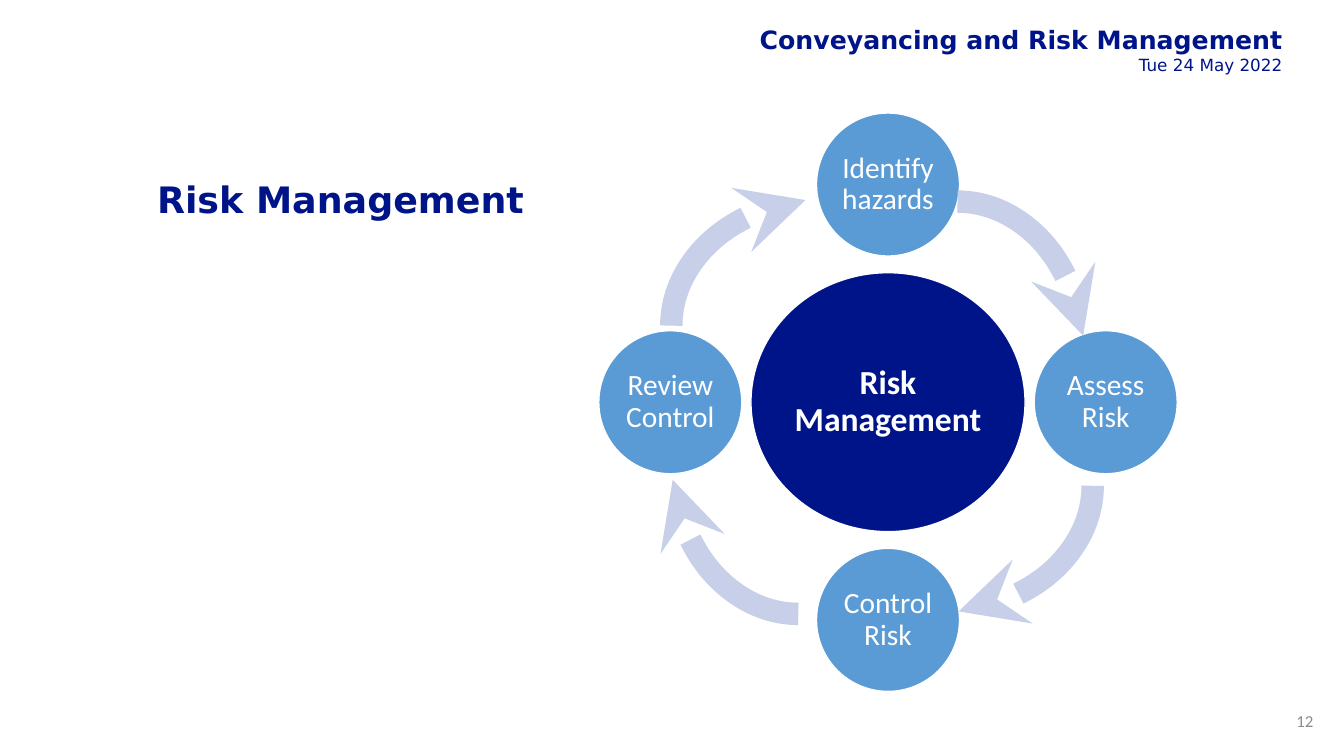
from math import cos, radians, sin

from lxml.etree import SubElement
from pptx import Presentation
from pptx.dml.color import RGBColor
from pptx.enum.shapes import MSO_SHAPE as Preset
from pptx.enum.text import MSO_ANCHOR as Anchor, MSO_AUTO_SIZE as AutoSize, PP_ALIGN as Align
from pptx.oxml.ns import qn
from pptx.util import Pt

HEADER = ("Conveyancing and Risk Management", "Tue 24 May 2022")
TITLE = "Risk Management"
HUB = "Risk Management"
STEPS = ("Identify hazards", "Assess Risk", "Control Risk", "Review Control")  # clockwise from top
PAGE_NUMBER = "12"
# rotation in degrees, centre x, centre y
CYCLE_ARROWS = ((0, 684, 256.3), (90, 668.2, 347), (270, 591.8, 232.6), (180, 570.2, 326.2))

THEME = {
    "navy": RGBColor(0x00, 0x14, 0x89),
    "blue": RGBColor(0x5B, 0x9B, 0xD5),
    "pale": RGBColor(0xC7, 0xCF, 0xE9),
    "grey": RGBColor(0x8C, 0x8C, 0x8C),
    "white": RGBColor(0xFF, 0xFF, 0xFF),
    "heading": "DejaVu Sans",
    "body": "Calibri",
    "title_size": 26, "header_size": 18, "date_size": 12,
    "hub_size": 24, "step_size": 21, "page_size": 12,
}

RING_CENTRE = (634.3, 287.3)
RING_RADIUS = 155.5
STEP_SIZE = (102.2, 102.2)
HUB_SIZE = (195.8, 185)
ARROW_SIZE = (181.4, 224.6)


def write(shape, lines, align, insets, anchor=Anchor.MIDDLE, spacing=1.0):
    """Fill a shape with (text, font, size, colour, bold) lines."""
    frame = shape.text_frame
    margins = dict(zip(("margin_left", "margin_top", "margin_right", "margin_bottom"), insets))
    for name, value in margins.items():
        setattr(frame, name, Pt(value))
    frame.word_wrap = True
    frame.vertical_anchor = anchor
    for index, (text, family, size, colour, bold) in enumerate(lines):
        paragraph = frame.add_paragraph() if index else frame.paragraphs[0]
        paragraph.alignment = align
        paragraph.line_spacing = spacing
        run = paragraph.add_run()
        run.text = text
        for name, value in {"name": family, "size": Pt(size), "bold": bold}.items():
            setattr(run.font, name, value)
        run.font.color.rgb = colour


def add_centred(slide, preset, centre, size):
    (x, y), (width, height) = centre, size
    shape = slide.shapes.add_shape(
        preset, Pt(x - width / 2), Pt(y - height / 2), Pt(width), Pt(height))
    shape.shadow.inherit = False
    return shape


def add_disc(slide, centre, size, fill, line):
    disc = add_centred(slide, Preset.OVAL, centre, size)
    disc.fill.solid()
    disc.fill.fore_color.rgb = fill
    disc.line.color.rgb = THEME["white"]
    disc.line.width = Pt(1)
    write(disc, [line], Align.CENTER, (2, 2, 2, 2), spacing=0.9)


def add_cycle_arrow(slide, rotation, centre):
    arrow = add_centred(slide, Preset.ARC, centre, ARROW_SIZE)
    arrow.rotation = rotation
    arrow.adjustments[0] = 162
    arrow.adjustments[1] = 209.744
    arrow.fill.background()
    arrow.line.color.rgb = THEME["pale"]
    arrow.line.width = Pt(16)
    SubElement(arrow.line._get_or_add_ln(), qn("a:tailEnd"), type="stealth")


def add_text(slide, box, *args, **kwargs):
    label = slide.shapes.add_textbox(*map(Pt, box))
    write(label, *args, **kwargs)
    return label


def main():
    deck = Presentation()
    deck.slide_width, deck.slide_height = Pt(960), Pt(540)
    slide = deck.slides.add_slide(deck.slide_layouts[6])
    navy, white = THEME["navy"], THEME["white"]
    heading, body = THEME["heading"], THEME["body"]

    header = add_text(
        slide, (535, 14.4, 386, 63.4),
        [(HEADER[0], heading, THEME["header_size"], navy, True),
         (HEADER[1], heading, THEME["date_size"], navy, False)],
        Align.RIGHT, (5, 2.9, 5, 2.9), anchor=Anchor.TOP)
    header.text_frame.auto_size = AutoSize.SHAPE_TO_FIT_TEXT

    add_disc(slide, RING_CENTRE, HUB_SIZE, navy, (HUB, body, THEME["hub_size"], white, True))
    for index, step in enumerate(STEPS):
        angle = radians(360 / len(STEPS) * index - 90)
        centre = (RING_CENTRE[0] + RING_RADIUS * cos(angle),
                  RING_CENTRE[1] + RING_RADIUS * sin(angle))
        add_disc(slide, centre, STEP_SIZE, THEME["blue"],
                 (step, body, THEME["step_size"], white, False))

    add_text(slide, (915.1, 500.4, 30.2, 28.8),
             [(PAGE_NUMBER, body, THEME["page_size"], THEME["grey"], False)],
             Align.RIGHT, (7.2, 3.6, 7.2, 3.6))
    for rotation, x, y in CYCLE_ARROWS:
        add_cycle_arrow(slide, rotation, (x, y))
    add_text(slide, (105.1, 108, 806.4, 72.7),
             [(TITLE, heading, THEME["title_size"], navy, True)],
             Align.LEFT, (7.2, 3.6, 7.2, 3.6), spacing=0.9)
    deck.save("out.pptx")


if __name__ == "__main__":
    main()
